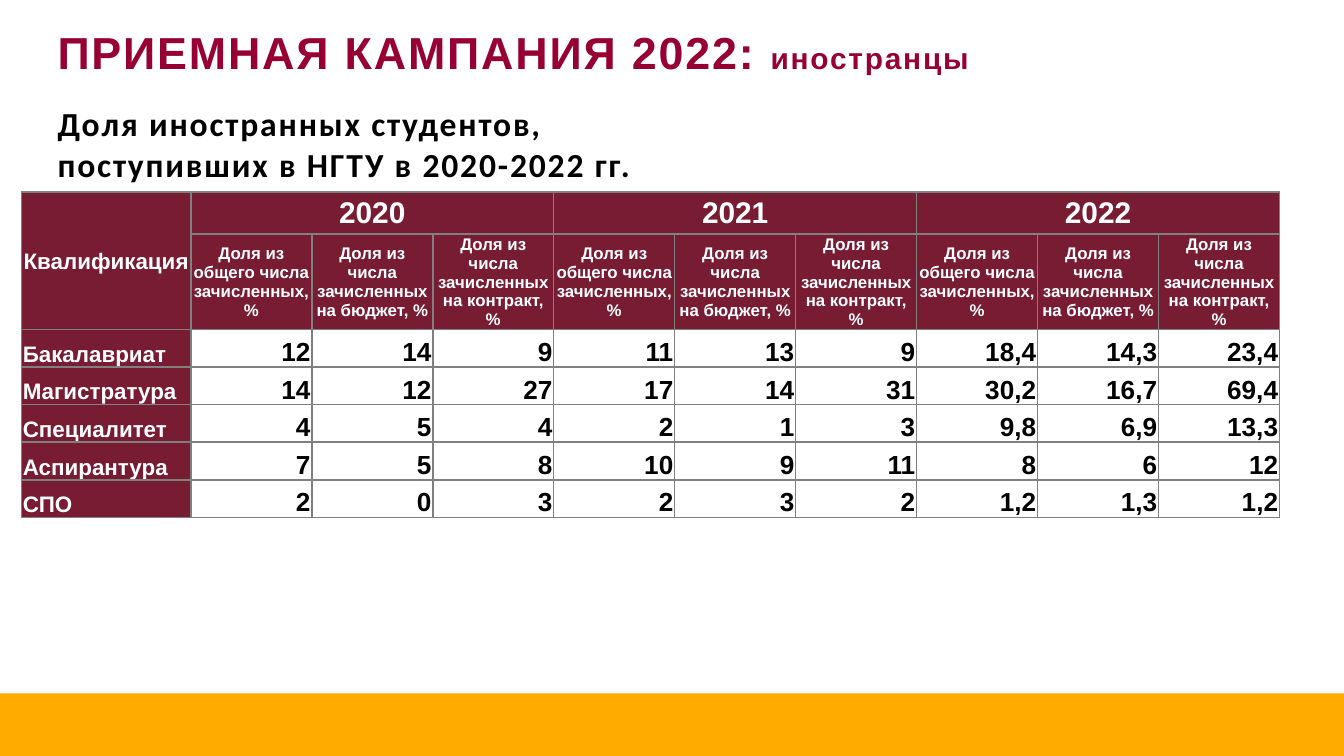
from lxml.etree import SubElement
from pptx import Presentation
from pptx.dml.color import RGBColor
from pptx.enum.shapes import MSO_SHAPE
from pptx.enum.text import MSO_ANCHOR, PP_ALIGN
from pptx.oxml import parse_xml
from pptx.oxml.ns import nsdecls
from pptx.util import Inches, Pt

# Content
TITLE = [("ПРИЕМНАЯ КАМПАНИЯ 2022: ", "title"), ("иностранцы", "topic")]
LEAD = [("Доля иностранных студентов, поступивших в НГТУ в 2020-2022 гг.", "lead")]
CORNER = "Квалификация"
YEARS = ["2020", "2021", "2022"]
SHARES = [
    "Доля из общего числа зачисленных, %",
    "Доля из числа зачисленных на бюджет, %",
    "Доля из числа зачисленных на контракт, %",
]
LEVELS = [
    ("Бакалавриат", "12 14 9 11 13 9 18,4 14,3 23,4"),
    ("Магистратура", "14 12 27 17 14 31 30,2 16,7 69,4"),
    ("Специалитет", "4 5 4 2 1 3 9,8 6,9 13,3"),
    ("Аспирантура", "7 5 8 10 9 11 8 6 12"),
    ("СПО", "2 0 3 2 3 2 1,2 1,3 1,2"),
]

# Theme: type styles are (font, size, colour, letter spacing)
THEME = {
    "band": "FFAB00", "head": "781C33", "body": "FFFFFF", "grid": "808080",
    "title": ("Arial", 24, "960032", 1),
    "topic": ("Arial", 16, "960032", 1),
    "lead": ("Calibri", 18, "000000", 1),
    "year": ("Arial", 16, "FFFFFF", 0),
    "share": ("Arial", 9, "FFFFFF", 0),
    "label": ("Arial", 12, "FFFFFF", 0),
    "value": ("Arial", 14, "000000", 0),
}
CELL = {
    "margin_left": Inches(0.01), "margin_right": Inches(0.01),
    "margin_top": Inches(0.01), "margin_bottom": 0,
}


def paint(shape, color):
    shape.fill.solid()
    shape.fill.fore_color.rgb = RGBColor.from_string(color)


def write(para, text, style):
    name, size, color, gap = THEME[style]
    run = para.add_run()
    run.text = text
    for key, val in {"name": name, "size": Pt(size), "bold": True}.items():
        setattr(run.font, key, val)
    run.font.color.rgb = RGBColor.from_string(color)
    if gap:
        run.font._element.set("spc", str(gap * 100))


def add_text(slide, box, runs, anchor):
    frame = slide.shapes.add_textbox(*map(Inches, box)).text_frame
    frame.word_wrap = True
    frame.vertical_anchor = anchor
    for text, style in runs:
        write(frame.paragraphs[0], text, style)


def frame_cell(cell):
    props = cell._tc.get_or_add_tcPr()
    for spot, side in enumerate("LRTB"):
        line = parse_xml(f'<a:ln{side} {nsdecls("a")} w="{Pt(1)}"><a:solidFill/></a:ln{side}>')
        SubElement(line[0], line[0].tag.replace("solidFill", "srgbClr"), val=THEME["grid"])
        props.insert(spot, line)


def fill_cell(cell, text, style, align, anchor):
    for key, val in {**CELL, "vertical_anchor": anchor}.items():
        setattr(cell, key, val)
    para = cell.text_frame.paragraphs[0]
    para.alignment = align
    write(para, text, style)


def add_grid(slide):
    wides = [1.26] + [0.9] * len(YEARS) * len(SHARES)
    # The second row grows to fit its wrapped headings
    highs = [0.31, 0.25] + [0.28] * len(LEVELS)
    grid = slide.shapes.add_table(
        len(highs), len(wides), Inches(0.16), Inches(1.43),
        Inches(9.37), Inches(2.49)).table
    for col, wide in zip(grid.columns, wides):
        col.width = Inches(wide)
    for row, high in zip(grid.rows, highs):
        row.height = Inches(high)

    # Fills and borders
    for r in range(len(highs)):
        for c in range(len(wides)):
            paint(grid.cell(r, c), THEME["head" if r < 2 or c == 0 else "body"])
            frame_cell(grid.cell(r, c))

    # Two header rows
    mid = (PP_ALIGN.CENTER, MSO_ANCHOR.MIDDLE)
    grid.cell(0, 0).merge(grid.cell(1, 0))
    fill_cell(grid.cell(0, 0), CORNER, "label", *mid)
    for n, year in enumerate(YEARS):
        left = 1 + n * len(SHARES)
        grid.cell(0, left).merge(grid.cell(0, left + len(SHARES) - 1))
        fill_cell(grid.cell(0, left), year, "year", *mid)
        for c, share in enumerate(SHARES, left):
            fill_cell(grid.cell(1, c), share, "share", *mid)

    # Body rows
    for r, (level, vals) in enumerate(LEVELS, 2):
        fill_cell(grid.cell(r, 0), level, "label", PP_ALIGN.LEFT, MSO_ANCHOR.BOTTOM)
        for c, val in enumerate(vals.split(), 1):
            fill_cell(grid.cell(r, c), val, "value", PP_ALIGN.RIGHT, MSO_ANCHOR.BOTTOM)


def main():
    deck = Presentation()
    deck.slide_width, deck.slide_height = Inches(10), Inches(10 * 9 / 16)
    slide = deck.slides.add_slide(deck.slide_layouts[6])

    # Bottom band
    band = slide.shapes.add_shape(
        MSO_SHAPE.RECTANGLE, 0, Inches(5.16), deck.slide_width, Inches(0.47))
    band.shadow.inherit = False
    paint(band, THEME["band"])
    band.line.fill.background()

    # Table and headings
    add_grid(slide)
    add_text(slide, (0.33, 0.72, 5.04, 0.71), LEAD, MSO_ANCHOR.TOP)
    add_text(slide, (0.33, -0.18, 9.16, 1.13), TITLE, MSO_ANCHOR.MIDDLE)
    deck.save("out.pptx")


if __name__ == "__main__":
    main()
